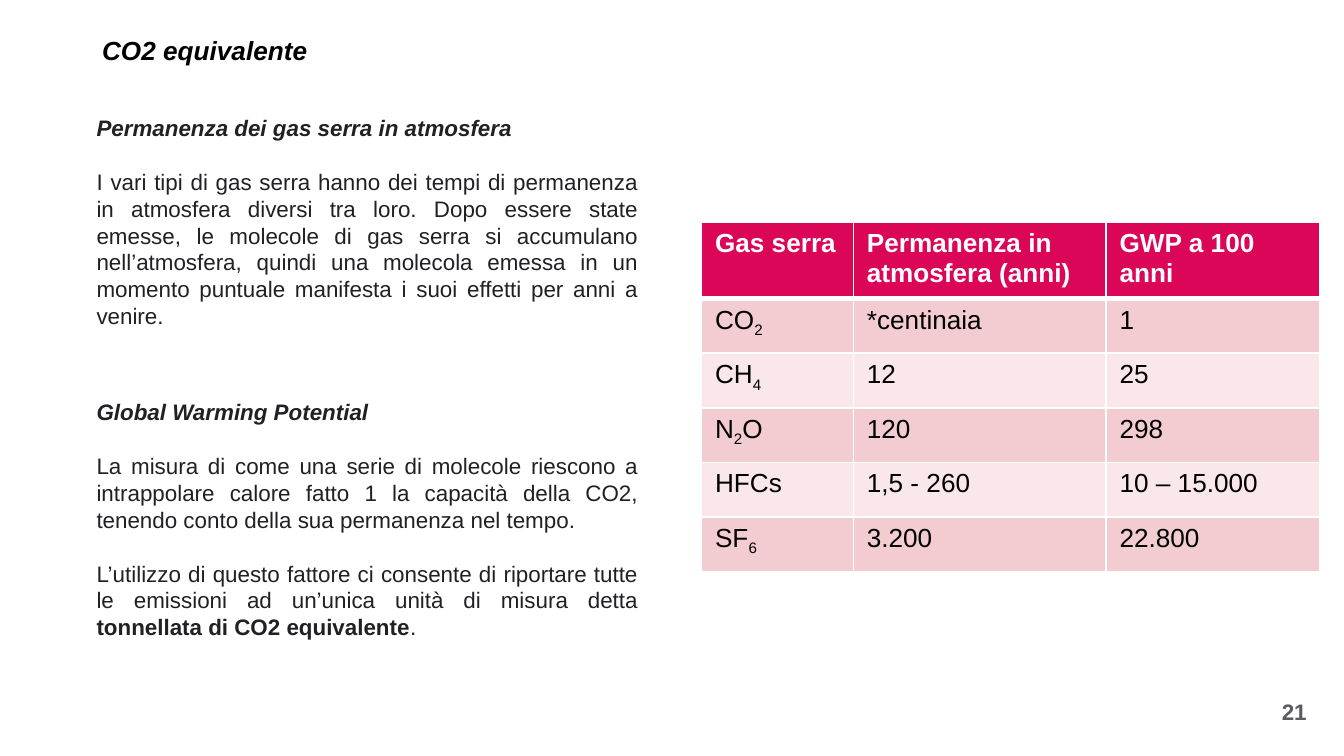
from dataclasses import dataclass

from lxml import etree
from pptx import Presentation
from pptx import util as u
from pptx.dml.color import RGBColor
from pptx.enum import text
from pptx.oxml.ns import qn

COLS, ROWS = 100, 56.25
CELL = u.Inches(0.1)
FONT = "Arial"
WHITE, BLACK, INK, GREY = "FFFFFF", "000000", "202124", "5A5B5E"
HEADER, BANDS = "DC0658", ("F2CCD1", "F9E7EA")


@dataclass
class Area:
    col: float
    row: float
    cols: float
    rows: float

    def emu(self) -> list[int]:
        return [round(n * CELL) for n in (self.col, self.row, self.cols, self.rows)]


@dataclass
class Section:
    area: Area
    heading: str
    paragraphs: list[list[tuple[str, bool]]]


SECTIONS = [
    Section(Area(6.2, 8, 42.3, 17.2), "Permanenza dei gas serra in atmosfera", [
        [("I vari tipi di gas serra hanno dei tempi di permanenza in atmosfera diversi "
          "tra loro. Dopo essere state emesse, le molecole di gas serra si accumulano "
          "nell’atmosfera, quindi una molecola emessa in un momento puntuale manifesta "
          "i suoi effetti per anni a venire.", False)],
    ]),
    Section(Area(6.2, 29.15, 42.3, 19.2), "Global Warming Potential", [
        [("La misura di come una serie di molecole riescono a intrappolare calore fatto 1 "
          "la capacità della CO2, tenendo conto della sua permanenza nel tempo.", False)],
        [("L’utilizzo di questo fattore ci consente di riportare tutte le emissioni ad "
          "un’unica unità di misura detta ", False),
         ("tonnellata di CO2 equivalente", True), (".", False)],
    ]),
]

TABLE_AREA = Area(52.2, 16.55, 46, 25.9)
COLUMN_WIDTHS = (11.3, 18.8, 15.9)
HEADER_HEIGHT, ROW_HEIGHT = 5.6, 4.06
GASES = [
    ("Gas serra", "Permanenza in atmosfera (anni)", "GWP a 100 anni"),
    ("CO_2", "*centinaia", "1"),
    ("CH_4", "12", "25"),
    ("N_2_O", "120", "298"),
    ("HFCs", "1,5 - 260", "10 – 15.000"),
    ("SF_6", "3.200", "22.800"),
]


def rgb(value: str) -> RGBColor:
    return RGBColor.from_string(value)


def style(font, size: float, color: str, bold=None, italic=None) -> None:
    font.name, font.size = FONT, u.Pt(size)
    font.color.rgb = rgb(color)
    font.bold, font.italic = bold, italic


def clear_frame(tf) -> None:
    tf.margin_left = tf.margin_right = tf.margin_top = tf.margin_bottom = 0
    tf.vertical_anchor = text.MSO_ANCHOR.MIDDLE
    tf.auto_size = text.MSO_AUTO_SIZE.NONE
    tf.word_wrap = True


def place_title(sp, area: Area, words: str) -> None:
    sp.left, sp.top, sp.width, sp.height = area.emu()
    clear_frame(sp.text_frame)
    p = sp.text_frame.paragraphs[0]
    p.text, p.alignment = words, text.PP_ALIGN.LEFT
    style(p.font, 14, BLACK, True, True)


def add_section(s, section: Section) -> None:
    tf = s.shapes.add_textbox(*section.area.emu()).text_frame
    tf.word_wrap = True
    tf.auto_size = text.MSO_AUTO_SIZE.SHAPE_TO_FIT_TEXT
    p = tf.paragraphs[0]
    p.text, p.alignment = section.heading, text.PP_ALIGN.JUSTIFY
    style(p.font, 12, INK, True, True)
    for runs in section.paragraphs:
        p = tf.add_paragraph()
        p.alignment, p.space_before = text.PP_ALIGN.JUSTIFY, u.Pt(14.4)
        style(p.font, 12, INK)
        for words, bold in runs:
            r = p.add_run()
            r.text = words
            if bold:
                r.font.bold = True


def add_border(cell, side: str, width: float) -> None:
    tc_pr = cell._tc.get_or_add_tcPr()
    line = etree.SubElement(tc_pr, qn(f"a:ln{side}"), w=str(u.Pt(width)))
    fill = etree.SubElement(line, qn("a:solidFill"))
    etree.SubElement(fill, qn("a:srgbClr"), val=WHITE)


def fill_cell(cell, words: str, row: int) -> None:
    head = row == 0
    widths = {"L": 1, "R": 1, "T": 3 if row == 1 else 1, "B": 3 if head else 1}
    for side, width in widths.items():
        add_border(cell, side, width)
    cell.fill.solid()
    cell.fill.fore_color.rgb = rgb(HEADER if head else BANDS[(row - 1) % 2])
    p = cell.text_frame.paragraphs[0]
    style(p.font, 14, WHITE if head else BLACK, head)
    for i, part in enumerate(words.split("_")):
        r = p.add_run()
        r.text = part
        if i % 2:
            r._r.get_or_add_rPr().set("baseline", "-25000")


def add_gas_table(s) -> None:
    table = s.shapes.add_table(len(GASES), len(COLUMN_WIDTHS), *TABLE_AREA.emu()).table
    for column, width in zip(table.columns, COLUMN_WIDTHS):
        column.width = round(width * CELL)
    for i, values in enumerate(GASES):
        table.rows[i].height = round((ROW_HEIGHT if i else HEADER_HEIGHT) * CELL)
        for j, words in enumerate(values):
            fill_cell(table.cell(i, j), words, i)


def add_page_number(s, area: Area, number: str) -> None:
    tf = s.shapes.add_textbox(*area.emu()).text_frame
    clear_frame(tf)
    p = tf.paragraphs[0]
    p.text, p.alignment = number, text.PP_ALIGN.CENTER
    style(p.font, 12, GREY, True)


def main() -> None:
    prs = Presentation()
    prs.slide_width, prs.slide_height = round(COLS * CELL), round(ROWS * CELL)
    s = prs.slides.add_slide(prs.slide_layouts[5])
    place_title(s.shapes.title, Area(7.6, 0, 77.9, 7.5), "CO2 equivalente")
    for section in SECTIONS:
        add_section(s, section)
    add_gas_table(s)
    add_page_number(s, Area(92.6, 51.35, 7.4, 3.2), "21")
    prs.save("out.pptx")


if __name__ == "__main__":
    main()
